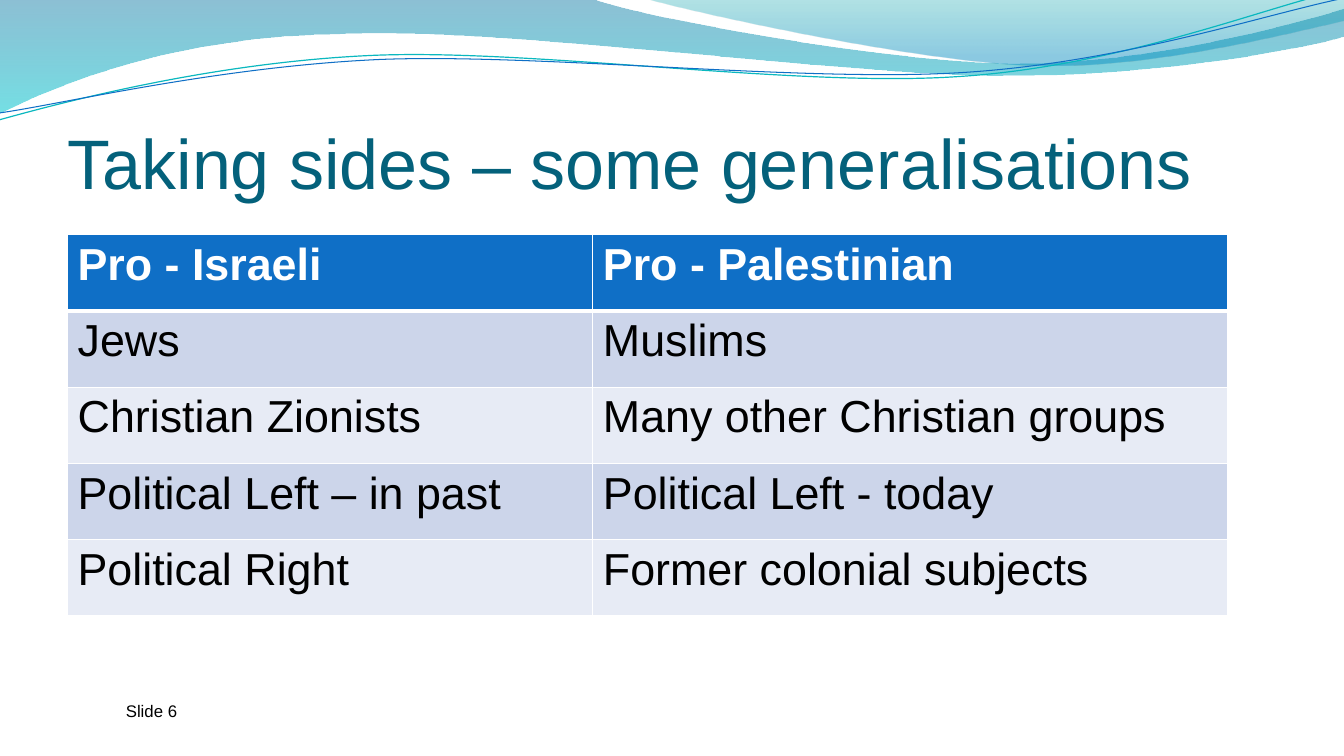
from math import cos, radians, sin

from lxml import etree
from pptx import Presentation
from pptx.dml.color import RGBColor
from pptx.enum.text import MSO_ANCHOR
from pptx.oxml.ns import qn
from pptx.util import Inches, Pt

TOP = MSO_ANCHOR.TOP
BOTTOM = MSO_ANCHOR.BOTTOM
FONT = "Arial"
WHITE, BLACK, BLUE = "FFFFFF", "000000", "0F6FC6"
BANDS = ("CCD5EA", "E7EBF5")
LINE_TILT = 357.3

ROWS = [
    ("Pro - Israeli", "Pro - Palestinian"),
    ("Jews", "Muslims"),
    ("Christian Zionists", "Many other Christian groups"),
    ("Political Left – in past", "Political Left - today"),
    ("Political Right", "Former colonial subjects"),
]

# Each outline is a start point, then segments: one point ends a line,
# three points (two controls and an end) make a cubic curve. Inches.
LONG_WAVE = [
    [(0, 0)],
    [(5.87, -0.01)],
    [(6.34, 0.17), (8.85, 0.63), (10.11, 0.63)],
    [(11.38, 0.63), (12.78, 0.26), (13.33, 0.09)],
    [(13.35, 0.36)],
    [(13.11, 0.44), (11.6, 0.76), (9.94, 0.75)],
    [(8.29, 0.75), (5.09, 0.28), (3.43, 0.34)],
    [(1.72, 0.36), (0.61, 0.83), (-0.01, 1.13)],
    [(0, 0)],
]
RIGHT_WAVE = [
    [(6.39, -0.01)],
    [(6.79, 0.11), (9.09, 0.62), (10.25, 0.65)],
    [(11.41, 0.69), (12.82, 0.32), (13.33, 0.21)],
    [(13.33, 0)],
    [(6.39, -0.01)],
]
TEAL_LINE = [
    [(-0.01, 1.19)],
    [(0.64, 1.01), (2.11, 0.62), (3.69, 0.55)],
    [(5.27, 0.48), (7.9, 0.87), (9.5, 0.76)],
    [(11.1, 0.66), (12.52, 0.08), (13.31, -0.1)],
]
BLUE_LINE = [
    [(0, 1.12)],
    [(0.63, 1.03), (2.18, 0.66), (3.78, 0.59)],
    [(5.37, 0.53), (7.96, 0.82), (9.55, 0.72)],
    [(11.15, 0.62), (12.55, 0.14), (13.34, -0.02)],
]


def color(value):
    return RGBColor.from_string(value)


def to_local(point, box, tilt):
    """Turn a slide point into a point of the box before the box is tilted."""
    left, top, width, height = box
    x, y = point[0] - left - width / 2, point[1] - top - height / 2
    angle = radians(-tilt)
    return (Inches(x * cos(angle) - y * sin(angle) + width / 2),
            Inches(x * sin(angle) + y * cos(angle) + height / 2))


def add_outline(slide, box, outline, close, tilt=0):
    """Add a freeform whose three-point segments are cubic curves."""
    segments = [[to_local(point, box, tilt) for point in segment] for segment in outline]
    builder = slide.shapes.build_freeform(*segments[0][0])
    builder.add_line_segments([segment[-1] for segment in segments[1:]], close=close)
    shape = builder.convert_to_shape()
    shape.shadow.inherit = False
    shape.left, shape.top, shape.width, shape.height = map(Inches, box)
    shape.rotation = tilt
    outline_path = next(shape.element.iter(qn("a:path")))
    outline_path.set("w", str(shape.width))
    outline_path.set("h", str(shape.height))
    for element, segment in zip(outline_path, segments):
        if len(segment) == 3:
            element.tag = qn("a:cubicBezTo")
        for point in list(element):
            element.remove(point)
        for x, y in segment:
            etree.SubElement(element, qn("a:pt"), x=str(x), y=str(y))
    return shape


def add_wave(slide, box, outline, stops):
    """Fill an outline from top to bottom; a stop is position, colour, opacity %."""
    shape = add_outline(slide, box, outline, True)
    shape.line.fill.background()
    shape.fill.gradient()
    shape.fill.gradient_angle = 270
    for stop, (position, value, _) in zip(shape.fill.gradient_stops, stops):
        stop.position = position
        stop.color.rgb = color(value)
    colors = list(shape.element.spPr.iter(qn("a:srgbClr")))
    for element, (_, _, opacity) in zip(colors, stops):
        etree.SubElement(element, qn("a:alpha"), val=str(opacity * 1000))


def add_wave_line(slide, box, outline, value, width):
    shape = add_outline(slide, box, outline, False, LINE_TILT)
    shape.fill.background()
    shape.line.color.rgb = color(value)
    shape.line.width = Pt(width)


def add_run(paragraph, text, size, value, bold=False):
    run = paragraph.add_run()
    run.text = text
    run.font.name = FONT
    run.font.size = Pt(size)
    run.font.bold = bold
    run.font.color.rgb = color(value)


def add_text(slide, box, text, size, value, anchor=TOP, insets=(0.1, 0.05, 0.1, 0.05)):
    frame = slide.shapes.add_textbox(*map(Inches, box)).text_frame
    frame.word_wrap = True
    frame.vertical_anchor = anchor
    (frame.margin_left, frame.margin_top,
     frame.margin_right, frame.margin_bottom) = map(Inches, insets)
    add_run(frame.paragraphs[0], text, size, value)


def set_borders(cell, widths):
    """Draw white borders; widths maps a side (L, R, T, B) to points."""
    properties = cell._tc.get_or_add_tcPr()
    for side, width in widths.items():
        line = etree.SubElement(properties, qn(f"a:ln{side}"), w=str(Pt(width)))
        fill = etree.SubElement(line, qn("a:solidFill"))
        etree.SubElement(fill, qn("a:srgbClr"), val=WHITE)


def add_sides_table(slide):
    height = 3.78
    table = slide.shapes.add_table(len(ROWS), 2, Inches(0.67), Inches(2.33),
                                   Inches(11.51), Inches(height)).table
    for column, width in zip(table.columns, (5.21, 6.3)):
        column.width = Inches(width)
    for i, texts in enumerate(ROWS):
        header = i == 0
        table.rows[i].height = Inches(height / len(ROWS))
        for j, text in enumerate(texts):
            cell = table.cell(i, j)
            set_borders(cell, {"L": 1, "R": 1, "T": 3 if i == 1 else 1,
                               "B": 3 if header else 1})
            cell.fill.solid()
            cell.fill.fore_color.rgb = color(BLUE if header else BANDS[(i - 1) % 2])
            add_run(cell.text_frame.paragraphs[0], text, 32,
                    WHITE if header else BLACK, header)


def main():
    presentation = Presentation()
    presentation.slide_width = Inches(13.33)
    presentation.slide_height = Inches(7.5)
    slide = presentation.slides.add_slide(presentation.slide_layouts[6])
    add_wave(slide, (-0.01, -0.01, 13.36, 1.14), LONG_WAVE,
             [(0, "0074A1", 45), (1, "00C6CF", 55)])
    add_wave(slide, (6.39, -0.01, 6.94, 0.7), RIGHT_WAVE,
             [(0, "00A1A9", 30), (0.8, "008BBF", 45)])
    add_wave_line(slide, (-0.03, 0.22, 13.36, 0.71), TEAL_LINE, "0AB8BF", 0.85)
    add_wave_line(slide, (-0.02, 0.3, 13.38, 0.58), BLUE_LINE, BLUE, 0.75)
    add_text(slide, (0.67, 0.77, 12, 1.25), "Taking sides – some generalisations",
             50, "04617B", BOTTOM, (0, 0.05, 0, 0))
    add_sides_table(slide)
    add_text(slide, (1.15, 6.9, 2.33, 0.4), "Slide 6", 12, BLACK)
    presentation.save("out.pptx")


if __name__ == "__main__":
    main()
